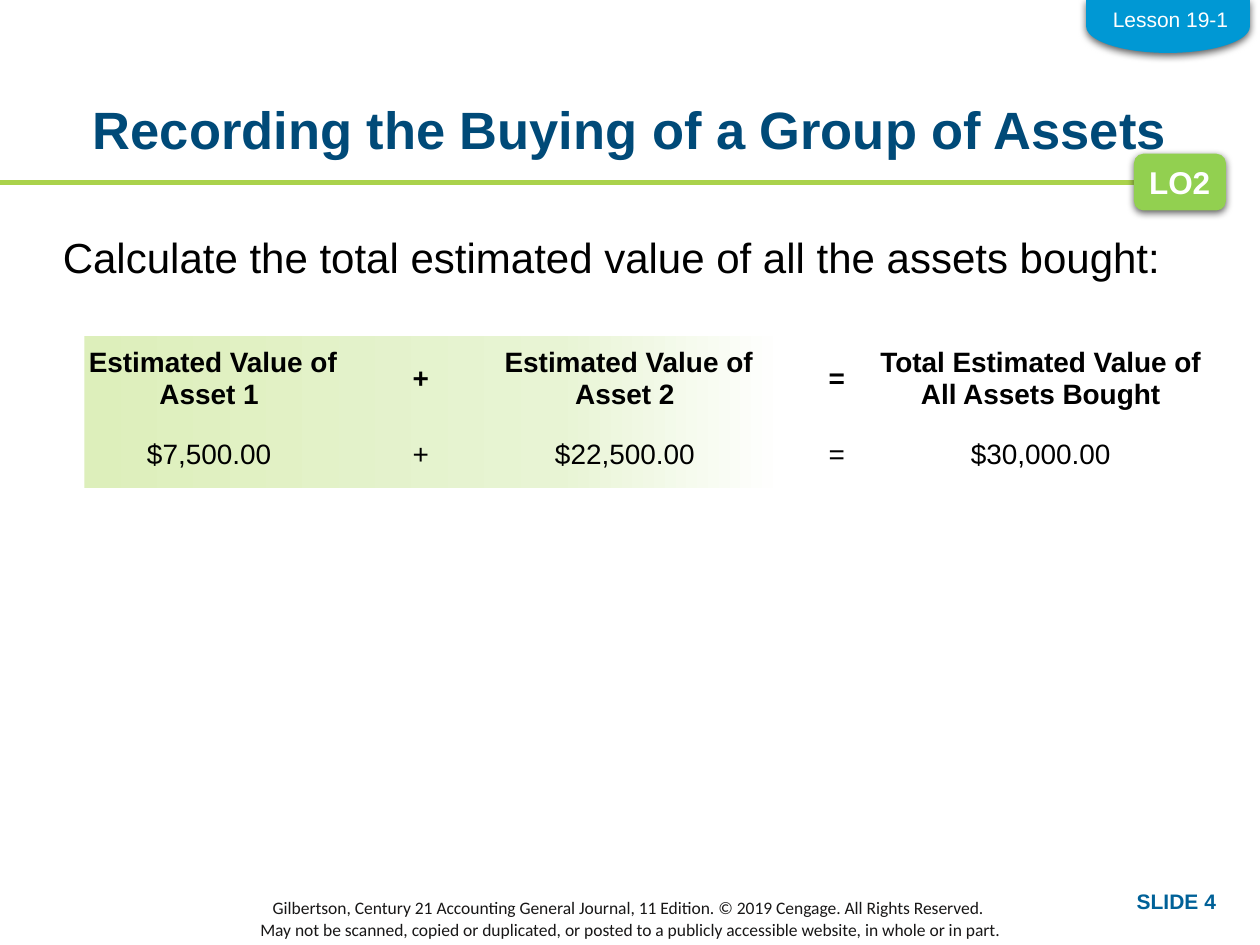
from lxml import etree
from pptx import Presentation
from pptx.dml.color import RGBColor
from pptx.enum.shapes import MSO_CONNECTOR, MSO_SHAPE
from pptx.enum.text import MSO_ANCHOR, MSO_AUTO_SIZE, PP_ALIGN
from pptx.oxml import parse_xml
from pptx.oxml.ns import qn
from pptx.util import Inches, Pt

LEFT, MID, RIGHT = PP_ALIGN.LEFT, PP_ALIGN.CENTER, PP_ALIGN.RIGHT
TOP, MIDDLE = MSO_ANCHOR.TOP, MSO_ANCHOR.MIDDLE
RECT, ROUND, DELAY = MSO_SHAPE.RECTANGLE, MSO_SHAPE.ROUNDED_RECTANGLE, MSO_SHAPE.FLOWCHART_DELAY
NS = 'xmlns:a="http://schemas.openxmlformats.org/drawingml/2006/main"'
PLAIN = "{2D5ABB26-0587-4C30-8999-92F81FD0307C}"

TITLE = "Recording the Buying of a Group of Assets"
TEXTS = [
    (["Gilbertson, Century 21 Accounting General Journal, 11 Edition. © 2019 Cengage. All Rights Reserved. ",
      "May not be scanned, copied or duplicated, or posted to a publicly accessible website, in whole or in part."],
     (0, 7.14, 10, 0.3), {"size": 10, "name": "Calibri", "color": "181717"}, MID, MIDDLE, True),
    (["Calculate the total estimated value of all the assets bought:"],
     (0.4, 1.79, 8.92, 0.5), {"size": 24}, LEFT, TOP, True),
    (["SLIDE 4"], (7.75, 7, 2, 0.3), {"size": 12, "bold": True, "color": "006198"}, RIGHT, TOP, True),
    (["Lesson 19-1"], (8.73, 0, 1.12, 0.3), {"size": 12, "color": "FFFFFF"}, MID, TOP, False),
]
ROWS = [
    (2.75, True, ["Estimated Value of\vAsset 1 ", "+", "Estimated Value of\vAsset 2 ", "=",
                  "Total Estimated Value of \vAll Assets Bought "]),
    (3.36, False, ["$7,500.00 ", "+", "$22,500.00 ", "=", "$30,000.00 "]),
]
COLS = [3, 0.3, 3, 0.3, 3]
FADE = [(0, "DDEFBB"), (50, "E8F4D4"), (74, "FFFFFF")]


def box(dims):
    return [Inches(d) for d in dims]


def tint(target, code):
    target.rgb = RGBColor.from_string(code)


def style(para, form, align):
    para.alignment = align
    look = {"name": "Arial", "bold": False, "color": "000000", **form}
    look["size"] = Pt(look["size"])
    tint(para.font.color, look.pop("color"))
    for key, val in look.items():
        setattr(para.font, key, val)


def fill_text(frame, lines, form, align):
    frame.text = "\n".join(lines)
    for para in frame.paragraphs:
        style(para, form, align)


def add_shape(slide, kind, dims, color=None):
    shape = slide.shapes.add_shape(kind, *box(dims))
    shape.shadow.inherit = False
    shape.line.fill.background()
    if color:
        shape.fill.solid()
        tint(shape.fill.fore_color, color)
    return shape


def add_glow(shape):
    effect = shape._element.spPr.find(qn("a:effectLst"))
    effect.append(parse_xml(
        f'<a:outerShdw {NS} blurRad="{Pt(4.5)}" dist="{Pt(1.5)}" dir="5400000" algn="t" rotWithShape="0">'
        '<a:srgbClr val="000000"><a:alpha val="63000"/></a:srgbClr></a:outerShdw>'))


def add_fade(shape):
    stops = "".join(f'<a:gs pos="{pos * 1000}"><a:srgbClr val="{code}"/></a:gs>' for pos, code in FADE)
    grad = parse_xml(f'<a:gradFill {NS} rotWithShape="1"><a:gsLst>{stops}</a:gsLst><a:lin ang="0" scaled="0"/></a:gradFill>')
    shape._element.spPr.find(qn("a:prstGeom")).addnext(grad)


def add_row(slide, top, bold, cells):
    table = slide.shapes.add_table(1, len(COLS), *box((0.19, top, sum(COLS), 0.49))).table
    table.first_row = table.horz_banding = False
    table._tbl.tblPr.find(qn("a:tableStyleId")).text = PLAIN
    for col, wide in zip(table.columns, COLS):
        col.width = Inches(wide)
    for cell, text in zip(table.rows[0].cells, cells):
        cell.fill.background()
        cell.vertical_anchor = MIDDLE
        cell.margin_left = cell.margin_right = cell.margin_top = Inches(0.01)
        cell.margin_bottom = 0
        fill_text(cell.text_frame, [text], {"size": 16, "bold": bold}, MID)


def add_text(slide, lines, dims, form, align, anchor, wrap):
    frame = slide.shapes.add_textbox(*box(dims)).text_frame
    frame.word_wrap = wrap
    frame.vertical_anchor = anchor
    fill_text(frame, lines, form, align)


def add_title(slide):
    title = slide.shapes.title
    title.left, title.top, title.width, title.height = box((0.69, 0.83, 8.62, 0.74))
    frame = title.text_frame
    frame.margin_left = frame.margin_right = frame.margin_top = frame.margin_bottom = 0
    frame.vertical_anchor = TOP
    frame.auto_size = MSO_AUTO_SIZE.NONE
    fill_text(frame, [TITLE], {"size": 30, "bold": True, "color": "004A78"}, MID)
    frame.paragraphs[0].line_spacing = 0.9


def add_rule(slide):
    rule = slide.shapes.add_connector(MSO_CONNECTOR.STRAIGHT, *box((0, 1.45, 9.5, 1.45)))
    tint(rule.line.color, "AAD24B")
    rule.line.width = Pt(3)
    etree.SubElement(rule._element.spPr, qn("a:effectLst"))


def main():
    deck = Presentation()
    deck.slide_width, deck.slide_height = box((10, 7.5))
    slide = deck.slides.add_slide(deck.slide_layouts[5])
    add_rule(slide)
    add_title(slide)
    add_fade(add_shape(slide, RECT, (0.67, 2.67, 7.5, 1.2)))
    for row in ROWS:
        add_row(slide, *row)

    badge = add_shape(slide, ROUND, (9, 1.22, 0.73, 0.45), "92D050")
    add_glow(badge)
    badge.text_frame.word_wrap = False
    fill_text(badge.text_frame, ["LO2"], {"size": 18, "bold": True, "color": "FFFFFF"}, LEFT)

    tab = add_shape(slide, DELAY, (9.06, -0.44, 0.42, 1.3), "0098D4")
    tab.rotation = 90
    add_glow(tab)
    for text in TEXTS:
        add_text(slide, *text)
    deck.save("out.pptx")


if __name__ == "__main__":
    main()
